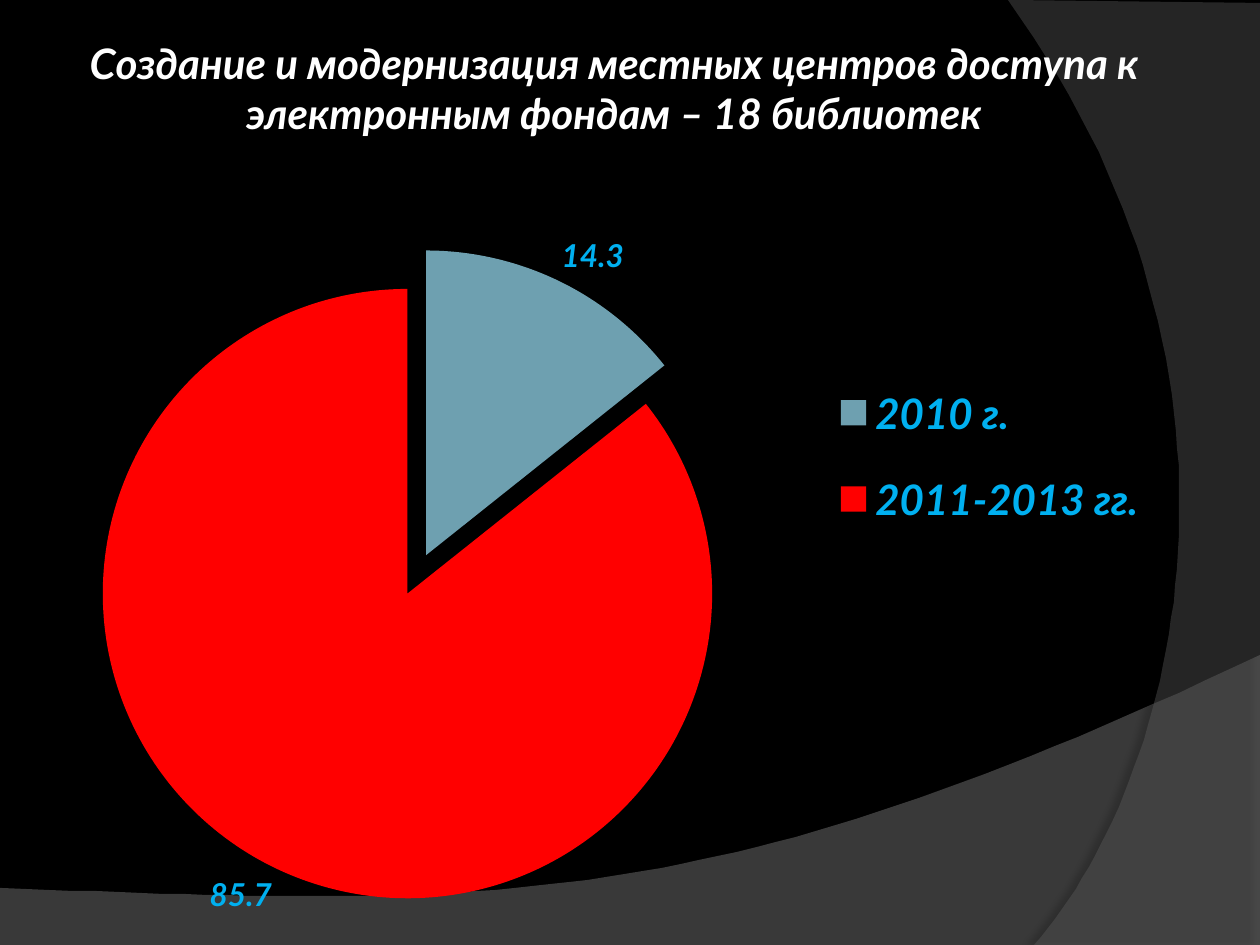
from lxml import etree
from pptx import Presentation
from pptx.chart.data import CategoryChartData
from pptx.dml.color import RGBColor
from pptx.enum.chart import XL_CHART_TYPE, XL_LABEL_POSITION, XL_LEGEND_POSITION
from pptx.enum.text import MSO_ANCHOR, PP_ALIGN
from pptx.oxml import parse_xml
from pptx.oxml.ns import nsdecls, qn
from pptx.util import Emu, Pt

PIE = XL_CHART_TYPE.PIE
OUTSIDE = XL_LABEL_POSITION.OUTSIDE_END
RIGHT = XL_LEGEND_POSITION.RIGHT
CENTER = PP_ALIGN.CENTER
MIDDLE = MSO_ANCHOR.MIDDLE

SCALE = 914400 / 126
CURVE_STEPS = 60
COLORS = {
    "background": "000000",
    "title": "FFFFFF",
    "wave": "7F7F7F",
    "side": "5E5E5E",
    "accent": "00B0F0",
    "first": "6EA0B0",
    "rest": "FF0000",
}


def px(length):
    return Emu(round(length * SCALE))


def color(name):
    return RGBColor.from_string(COLORS[name])


def bezier(start, first, second, end):
    points = []
    for step in range(1, CURVE_STEPS + 1):
        t = step / CURVE_STEPS
        weights = ((1 - t) ** 3, 3 * t * (1 - t) ** 2, 3 * t * t * (1 - t), t ** 3)
        corners = zip(weights, (start, first, second, end))
        pairs = [(w * x, w * y) for w, (x, y) in corners]
        points.append(tuple(sum(axis) for axis in zip(*pairs)))
    return points


class SlideBuilder:
    def __init__(self, deck, font="Lato"):
        self.font = font
        self.page = deck.slides.add_slide(deck.slide_layouts[5])
        fill = self.page.background.fill
        fill.solid()
        fill.fore_color.rgb = color("background")

    def style(self, font, size, name):
        font.name = self.font
        font.size = Pt(size)
        font.bold = font.italic = True
        font.color.rgb = color(name)

    def swoosh(self, corners, controls, name, opacity, shadow):
        curve = bezier(corners[-2], *controls, corners[-1])
        points = corners[:-1] + curve
        builder = self.page.shapes.build_freeform(*points[0], scale=SCALE)
        builder.add_line_segments(points[1:], close=True)
        shape = builder.convert_to_shape()
        shape.line.fill.background()
        shape.fill.solid()
        shape.fill.fore_color.rgb = color(name)
        shade = shape.fill._xPr.find(".//" + qn("a:srgbClr"))
        etree.SubElement(shade, qn("a:alpha"), val=str(opacity * 1000))
        shape.shadow.inherit = False
        strength, distance, angle = shadow
        effects = shape._element.spPr.find(qn("a:effectLst"))
        effects.append(parse_xml(
            f'<a:outerShdw {nsdecls("a")} blurRad="{Pt(4)}" dist="{Pt(distance)}" '
            f'dir="{angle * 60000}" algn="ctr" rotWithShape="0">'
            f'<a:srgbClr val="000000"><a:alpha val="{strength * 1000}"/></a:srgbClr>'
            '</a:outerShdw>'))

    def title(self, text, left, top, width, height, size):
        box = self.page.shapes.title
        box.left, box.top, box.width, box.height = map(px, (left, top, width, height))
        frame = box.text_frame
        frame.text = text
        frame.word_wrap = True
        frame.vertical_anchor = MIDDLE
        frame.margin_left = frame.margin_right = px(6)
        frame.margin_top = frame.margin_bottom = px(6)
        para = frame.paragraphs[0]
        para.alignment = CENTER
        self.style(para.font, size, "title")
        self.page.shapes._spTree.append(box._element)

    def layout(self, element, x, y, w, h, inner=False):
        target = '<c:layoutTarget val="inner"/>' if inner else ""
        sizes = "".join(f'<c:{key} val="{value}"/>'
                        for key, value in zip("xywh", (x, y, w, h)))
        manual = parse_xml(
            f'<c:layout {nsdecls("c")}><c:manualLayout>{target}'
            f'<c:xMode val="edge"/><c:yMode val="edge"/>{sizes}'
            '</c:manualLayout></c:layout>')
        for old in element.findall(qn("c:layout")):
            element.remove(old)
        position = element.find(qn("c:legendPos"))
        if position is None:
            element.insert(0, manual)
        else:
            position.addnext(manual)

    def pie(self, values, fills, left, top, width, height):
        data = CategoryChartData()
        data.categories = list(values)
        data.add_series("Series 1", list(values.values()))
        frame = self.page.shapes.add_chart(PIE, *map(px, (left, top, width, height)), data)
        chart = frame.chart
        chart.has_title = False
        chart.font.name = "Arial"
        chart.font.size = Pt(18)
        chart.font.color.rgb = color("title")
        plot = chart.plots[0]
        plot.vary_by_categories = True
        series = plot.series[0]
        for index, name in enumerate(fills):
            fill = series.points[index].format.fill
            fill.solid()
            fill.fore_color.rgb = color(name)
        explosion = etree.Element(qn("c:explosion"), val="7")
        series._element.find(qn("c:dPt")).addprevious(explosion)
        labels = series.data_labels
        labels.show_value = True
        labels.show_percentage = False
        labels.position = OUTSIDE
        self.style(labels.font, 18, "accent")
        chart.has_legend = True
        legend = chart.legend
        legend.position = RIGHT
        legend.include_in_layout = False
        self.style(legend.font, 24, "accent")
        area = chart._chartSpace.chart.plotArea
        self.layout(area, 0.11, 0.06, 0.52, 0.88, inner=True)
        self.layout(legend._element, 0.69, 0.2, 0.27, 0.28)


def main():
    deck = Presentation()
    deck.slide_width, deck.slide_height = px(1260), px(945)
    slide = SlideBuilder(deck)
    slide.swoosh([(0, 946), (1260, 946), (1260, 655), (0, 888)],
                 [(704, 919), (493, 906)], "wave", 45, (35, 3.5, 270))
    slide.swoosh([(1260, 3), (1260, 945), (1034, 945), (1008, 0)],
                 [(1178, 780), (1283, 378)], "side", 40, (45, 4, 180))
    slide.title("Cоздание и модернизация местных центров доступа к "
                "электронным фондам – 18 библиотек", 63, 0, 1102, 175, 24)
    slide.pie({"2010 г.": 14.3, "2011-2013 гг.": 85.7}, ["first", "rest"],
              -49, 204, 1259, 741)
    deck.save("out.pptx")


if __name__ == "__main__":
    main()
